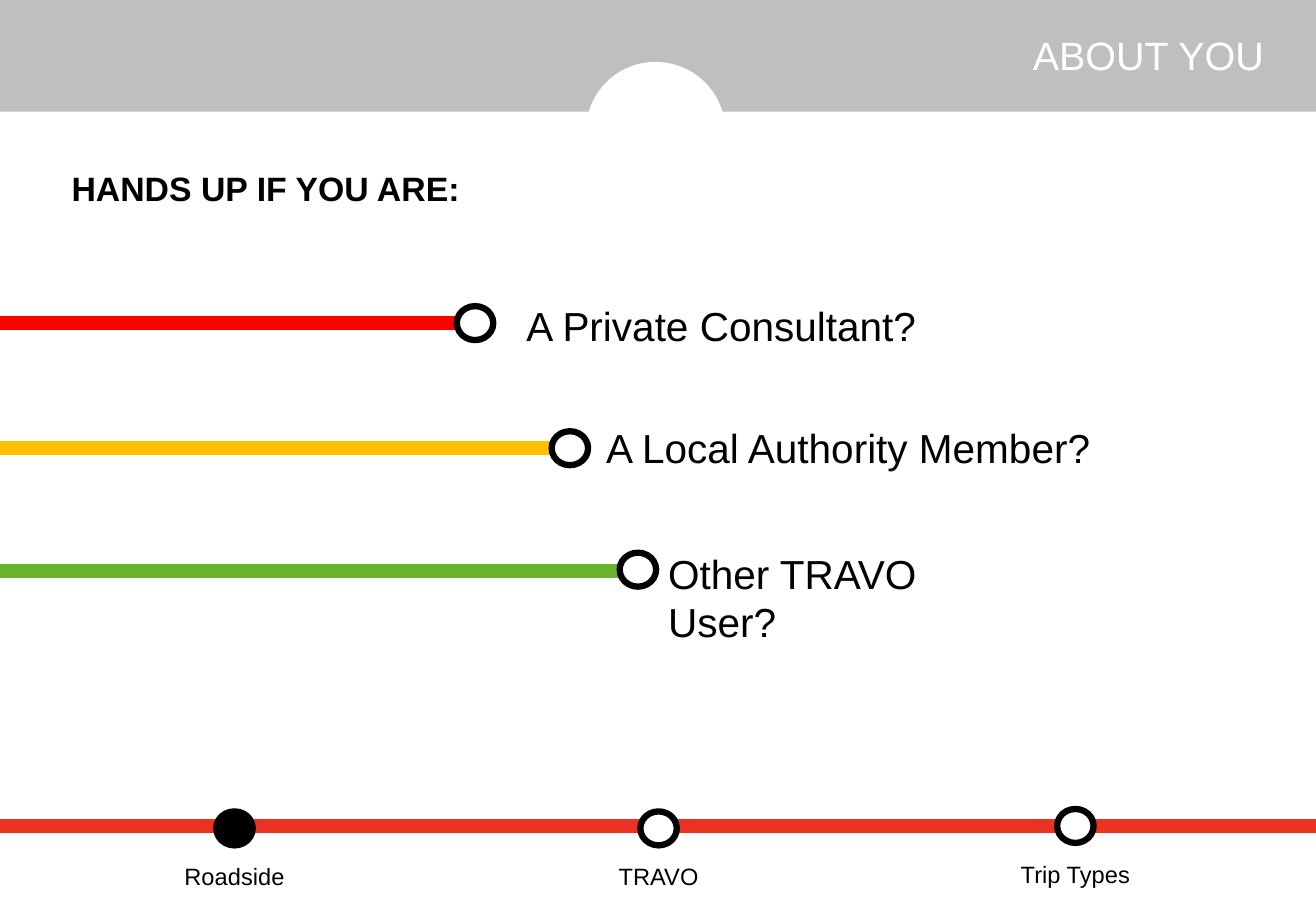
from pptx import Presentation
from pptx.dml.color import RGBColor
from pptx.enum.shapes import MSO_CONNECTOR, MSO_SHAPE
from pptx.enum.text import MSO_AUTO_SIZE, PP_ALIGN
from pptx.oxml.ns import qn
from pptx.util import Pt
from lxml import etree

PX = 9144
WIDTH, HEIGHT = 1083, 750
STOP_W, STOP_H = 30, 28
STRAIGHT = MSO_CONNECTOR.STRAIGHT
RECT, OVAL = MSO_SHAPE.RECTANGLE, MSO_SHAPE.OVAL
LEFT, CENTER, RIGHT = PP_ALIGN.LEFT, PP_ALIGN.CENTER, PP_ALIGN.RIGHT
COLORS = {
    "black": "000000", "white": "FFFFFF", "header": "BFBFBF", "red": "FF0000",
    "amber": "FFC000", "green": "69B42D", "route": "EB3223",
}


def rgb(name):
    return RGBColor.from_string(COLORS[name])


def emu(*lengths):
    return [n * PX for n in lengths]


def add_block(s, kind, box, fill, outline=None):
    sp = s.shapes.add_shape(kind, *emu(*box))
    sp.shadow.inherit = False
    sp.fill.solid()
    sp.fill.fore_color.rgb = rgb(fill)
    if outline:
        sp.line.color.rgb = rgb(outline)
        sp.line.width = Pt(3.75)
    else:
        sp.line.fill.background()


def add_track(s, x1, x2, y, color):
    line = s.shapes.add_connector(STRAIGHT, *emu(x1, y, x2, y))
    line.line.color.rgb = rgb(color)
    line.line.width = Pt(8.5)
    etree.SubElement(line._element.spPr, qn("a:effectLst"))


def add_stop(s, x, y, fill="white"):
    add_block(s, OVAL, (x, y, STOP_W, STOP_H), fill, "black")


def add_text(s, box, text, size, align=LEFT, color="black", bold=False):
    tf = s.shapes.add_textbox(*emu(*box)).text_frame
    tf.word_wrap = True
    tf.auto_size = MSO_AUTO_SIZE.SHAPE_TO_FIT_TEXT
    p = tf.paragraphs[0]
    p.alignment = align
    r = p.add_run()
    r.text = text
    for name, value in {"name": "Arial", "size": Pt(size), "bold": bold}.items():
        setattr(r.font, name, value)
    r.font.color.rgb = rgb(color)


def add_header(s, x, y, w, h):
    add_block(s, RECT, (x, y, w, h), "header")
    add_block(s, OVAL, (x + 482, y + 51, 115, 115), "white")
    add_text(s, (x + w - 417, y + 21, 384, 50), "ABOUT YOU", 23.4, RIGHT, "white")


def add_question(s, x, y, track_end, stop, label, text, color, align=LEFT):
    add_track(s, x, x + track_end, y, color)
    add_stop(s, x + stop[0], y + stop[1])
    label_x, label_y, label_w = label
    add_text(s, (x + label_x, y + label_y, label_w, 50), text, 24, align)


def add_questions(s, x, y):
    add_text(s, (x + 49, y, 732, 69), "HANDS UP IF YOU ARE:", 20, bold=True)
    questions = [
        (133, 376, (376, -14), (404, -23, 379), "A Private Consultant?", "red", CENTER),
        (236, 476, (454, -14), (489, -26, 443), "A Local Authority Member?", "amber"),
        (337, 510, (510, -15), (540, -23, 315), "Other TRAVO User?", "green"),
    ]
    for dy, *question in questions:
        add_question(s, x, y + dy, *question)


def add_route(s, x, y, w):
    add_track(s, x, x + w, y, "route")
    stops = [
        (178, -12, 1, "Roadside", "black"),
        (527, -12, 350, "TRAVO", "white"),
        (870, -14, 693, "Trip Types", "white"),
    ]
    for stop_x, dy, label_x, text, fill in stops:
        add_stop(s, x + stop_x, y + dy, fill)
        add_text(s, (x + label_x, y + dy + 37, 384, 34), text, 14, CENTER)


def main():
    prs = Presentation()
    prs.slide_width, prs.slide_height = emu(WIDTH, HEIGHT)
    s = prs.slides.add_slide(prs.slide_layouts[6])
    add_header(s, 0, 0, WIDTH, 92)
    add_questions(s, 0, 133)
    add_route(s, 0, 680, WIDTH)
    prs.save("out.pptx")


if __name__ == "__main__":
    main()
